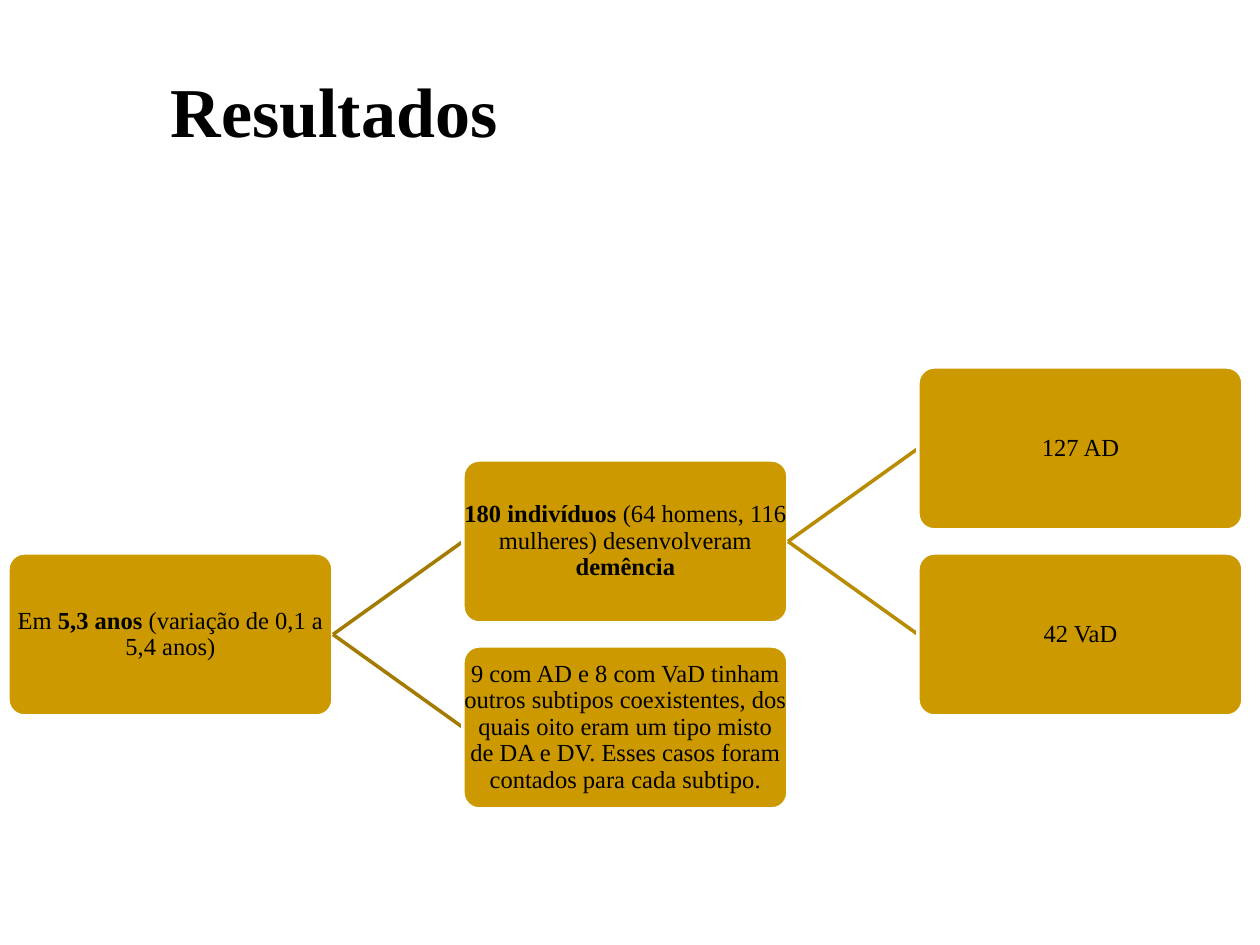
from pptx import Presentation
from pptx.dml.color import RGBColor
from pptx.enum.shapes import MSO_CONNECTOR, MSO_SHAPE
from pptx.enum.text import MSO_ANCHOR, PP_ALIGN
from pptx.oxml.ns import qn
from pptx.util import Pt
from lxml.etree import SubElement

SCALE = 914400 / 126
FONT = "Times New Roman"
BLACK = RGBColor(0x00, 0x00, 0x00)
WHITE = RGBColor(0xFF, 0xFF, 0xFF)
GOLD = RGBColor(0xCC, 0x99, 0x00)
DARK_GOLD = RGBColor(0xA3, 0x7B, 0x00)
MID_GOLD = RGBColor(0xB9, 0x8B, 0x00)

LEFT, TOP = 8, 367
COLUMN_STEP, ROW_STEP = 455, 93
BOX_W, BOX_H = 325, 163

PERIOD = [("Em ", False), ("5,3 anos ", True),
          ("(variação de 0,1 a 5,4 anos)", False)]
DEMENTIA = [("180 indivíduos ", True),
            ("(64 homens, 116 mulheres) desenvolveram ", False),
            ("demência", True)]
MIXED = [("9 com AD e 8 com VaD tinham outros subtipos coexistentes, dos "
          "quais oito eram um tipo misto de DA e DV. Esses casos foram "
          "contados para cada subtipo.", False)]


def px(n):
    return round(n * SCALE)


def add_text(s, x, y, w, h, runs, size, anchor, align, margins):
    tf = s.shapes.add_textbox(px(x), px(y), px(w), px(h)).text_frame
    tf.word_wrap = True
    tf.vertical_anchor = anchor
    tf.margin_left = tf.margin_right = px(margins[0])
    tf.margin_top = tf.margin_bottom = px(margins[1])
    p = tf.paragraphs[0]
    p.alignment = align
    for text, bold in runs:
        r = p.add_run()
        r.text = text
        r.font.name = FONT
        r.font.size = Pt(size)
        r.font.bold = bold
        r.font.color.rgb = BLACK
    return p


def add_box(s, column, row, runs):
    x, y = LEFT + column * COLUMN_STEP, TOP + row * ROW_STEP
    sp = s.shapes.add_shape(MSO_SHAPE.ROUNDED_RECTANGLE,
                            px(x), px(y), px(BOX_W), px(BOX_H))
    sp.shadow.inherit = False
    sp.adjustments[0] = 0.1
    sp.fill.solid()
    sp.fill.fore_color.rgb = GOLD
    sp.line.color.rgb = WHITE
    sp.line.width = Pt(2)
    p = add_text(s, x, y, BOX_W, BOX_H, runs, 14,
                 MSO_ANCHOR.MIDDLE, PP_ALIGN.CENTER, (1, 1))
    p.line_spacing = 0.9
    return sp


def add_branch(s, parent, color, column, row, runs):
    cxn = s.shapes.add_connector(MSO_CONNECTOR.STRAIGHT, 0, 0, 0, 0)
    cxn.line.color.rgb = color
    cxn.line.width = Pt(2)
    SubElement(cxn._element.spPr, qn("a:effectLst"))
    box = add_box(s, column, row, runs)
    cxn.begin_connect(parent, 3)
    cxn.end_connect(box, 1)
    return box


def main():
    prs = Presentation()
    prs.slide_width, prs.slide_height = px(1260), px(945)
    s = prs.slides.add_slide(prs.slide_layouts[6])
    add_text(s, 158, 10, 935, 147, [("Resultados", True)], 40,
             MSO_ANCHOR.BOTTOM, PP_ALIGN.LEFT, (13, 6))
    period = add_box(s, 0, 2, PERIOD)
    dementia = add_branch(s, period, DARK_GOLD, 1, 1, DEMENTIA)
    add_branch(s, dementia, MID_GOLD, 2, 0, [("127 AD", False)])
    add_branch(s, dementia, MID_GOLD, 2, 2, [("42 VaD", False)])
    add_branch(s, period, DARK_GOLD, 1, 3, MIXED)
    prs.save("out.pptx")


if __name__ == "__main__":
    main()
